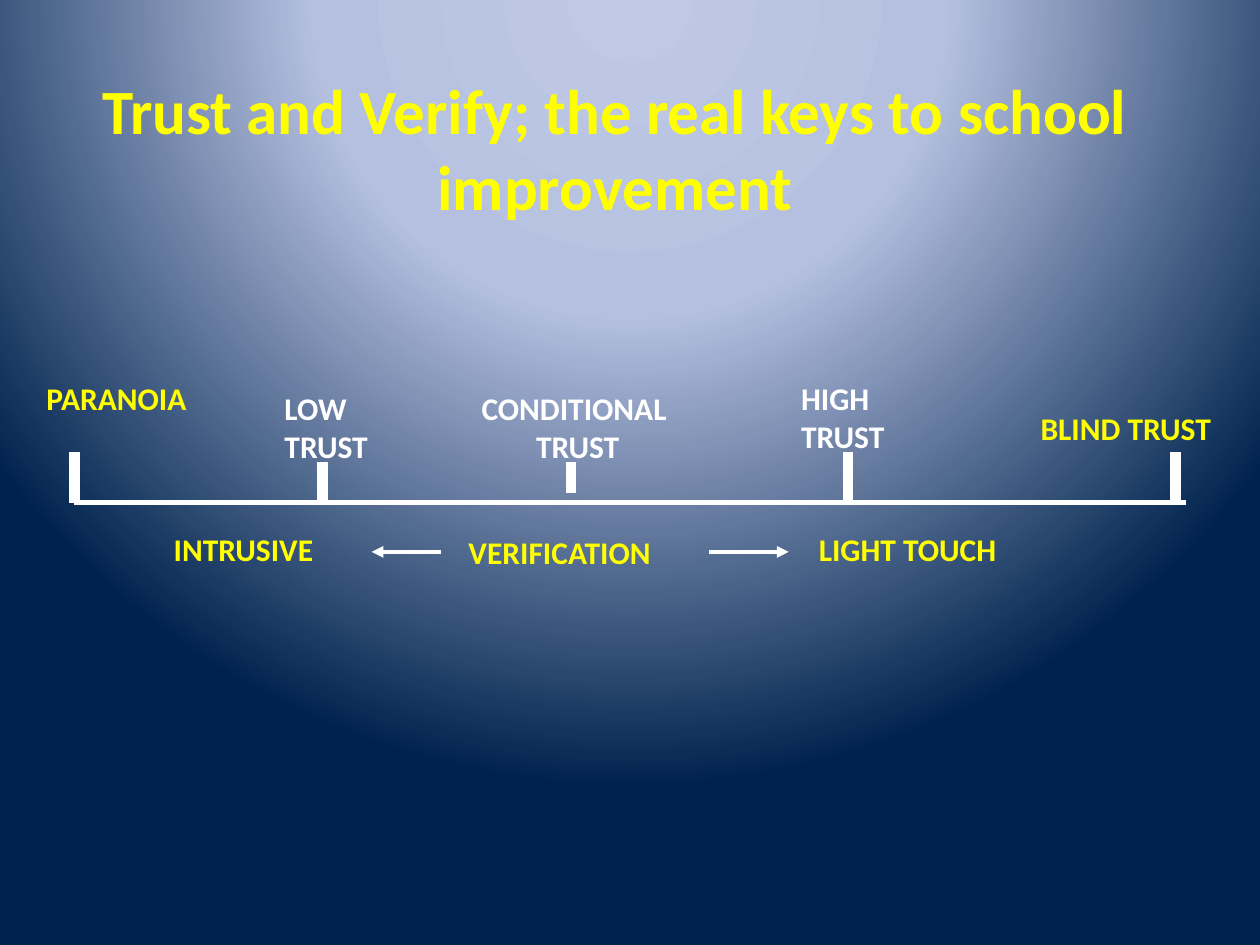
from collections import namedtuple

from lxml.etree import SubElement
from pptx import Presentation
from pptx.dml.color import RGBColor
from pptx.enum.shapes import MSO_CONNECTOR as Connector
from pptx.enum.text import MSO_ANCHOR as Anchor, MSO_AUTO_SIZE as AutoSize, PP_ALIGN as Align
from pptx.oxml import parse_xml
from pptx.oxml.ns import nsdecls, qn
from pptx.util import Inches, Pt

WIDTH, HEIGHT = Inches(10), Inches(7.5)
COLUMN, ROW = WIDTH / 100, HEIGHT / 75
YELLOW, WHITE = "FFFF00", "FFFFFF"
GLOW = {0: "BFC9E5", 40: "B5C0E0", 100: "00234D"}
LEFT, CENTER = Align.LEFT, Align.CENTER

Box = namedtuple("Box", "col row cols rows")
Stop = namedtuple("Stop", "words color align label tick tick_top tick_end")

TRUST_STOPS = [
    Stop(["PARANOIA"], YELLOW, LEFT, Box(0, 0, 13.2, 4), 3.2, 6.3, 10.3),
    Stop(["LOW", "TRUST"], WHITE, LEFT, Box(18.9, 0.8, 10.3, 7), 22.9, 7.1, 10.3),
    Stop(["CONDITIONAL ", "TRUST"], WHITE, CENTER, Box(33.1, 0.8, 20.1, 7), 42.6, 7.1, 9.5),
    Stop(["HIGH", "TRUST"], WHITE, LEFT, Box(59.9, 0, 10.3, 7), 64.6, 6.3, 10.3),
    Stop(["BLIND TRUST"], YELLOW, LEFT, Box(78.9, 2.4, 16.1, 4), 90.6, 6.3, 10.3),
]
VERIFICATION_LABELS = {
    "INTRUSIVE": Box(0, 0, 13.2, 4),
    "VERIFICATION": Box(23.4, 0.2, 16.6, 4),
    "LIGHT TOUCH": Box(51.2, 0, 16.2, 4),
}
VERIFICATION_ARROWS = [(22.2, 16.7), (43.5, 49.8)]


def rgb(color):
    """Turn a hex string into a colour."""
    return RGBColor.from_string(color)


def within(outer, inner):
    """Shift a box by the corner of the region that holds it."""
    return inner._replace(col=outer.col + inner.col, row=outer.row + inner.row)


def measure(box):
    """Give left, top, width and height of a grid box."""
    return [round(n * unit) for n, unit in zip(box, (COLUMN, ROW, COLUMN, ROW))]


def write(frame, words, size, color, align, wrap):
    """Fill a text frame with one bold paragraph for each entry."""
    for key, value in {"word_wrap": wrap, "auto_size": AutoSize.SHAPE_TO_FIT_TEXT,
                       "vertical_anchor": Anchor.TOP}.items():
        setattr(frame, key, value)
    frame.text = "\n".join(words)
    for paragraph in frame.paragraphs:
        paragraph.alignment = align
        for key, value in {"name": "Calibri", "size": Pt(size), "bold": True}.items():
            setattr(paragraph.font, key, value)
        paragraph.font.color.rgb = rgb(color)


def add_label(slide, box, words, color, align=LEFT):
    """Place an unwrapped label on the grid."""
    write(slide.shapes.add_textbox(*measure(box)).text_frame, words, 18, color, align, False)


def add_line(slide, region, start, end, weight, arrow=False):
    """Draw a white line between two grid points of a region."""
    points = [round((corner + n) * unit) for point in (start, end)
              for corner, n, unit in zip(region, point, (COLUMN, ROW))]
    connector = slide.shapes.add_connector(Connector.STRAIGHT, *points)
    connector.line.width = Pt(weight)
    connector.line.color.rgb = rgb(WHITE)
    if arrow:
        SubElement(connector.line._get_or_add_ln(), qn("a:tailEnd"), type="triangle")
    SubElement(connector._element.spPr, qn("a:effectLst"))


def paint_background(slide):
    """Give the slide a round glow centred on its top edge."""
    slide.background.fill.gradient()
    linear = slide.element.find(".//" + qn("a:gradFill"))
    stops = "".join(f'<a:gs pos="{share * 1000}"><a:srgbClr val="{color}"/></a:gs>'
                    for share, color in GLOW.items())
    glow = parse_xml(
        f'<a:gradFill {nsdecls("a")} rotWithShape="1"><a:gsLst>{stops}</a:gsLst>'
        '<a:path path="circle"><a:fillToRect l="50000" t="-80000" r="50000" b="180000"/>'
        '</a:path></a:gradFill>')
    linear.getparent().replace(linear, glow)


def set_title(slide, box, words):
    """Move and format the title placeholder."""
    title = slide.shapes.title
    title.left, title.top, title.width, title.height = measure(box)
    write(title.text_frame, [words], 36, YELLOW, CENTER, True)


def draw_trust_scale(slide, region):
    """Draw the axis of trust with its labels and ticks."""
    add_line(slide, region, (3.2, region.rows), (91.4, region.rows), 3)
    for stop in TRUST_STOPS:
        add_label(slide, within(region, stop.label), stop.words, stop.color, stop.align)
        add_line(slide, region, (stop.tick, stop.tick_top), (stop.tick, stop.tick_end), 6)


def draw_verification(slide, region):
    """Draw the kinds of verification and the arrows between them."""
    for word, box in VERIFICATION_LABELS.items():
        add_label(slide, within(region, box), [word], YELLOW)
    middle = region.rows / 2
    for start, end in VERIFICATION_ARROWS:
        add_line(slide, region, (start, middle), (end, middle), 2.25, arrow=True)


def main():
    """Build and save the slide."""
    deck = Presentation()
    deck.slide_width, deck.slide_height = WIDTH, HEIGHT
    slide = deck.slides.add_slide(deck.slide_layouts.get_by_name("Title Only"))
    paint_background(slide)
    set_title(slide, Box(3.5, 5.2, 90.6, 13.1),
              "Trust and Verify; the real keys to school improvement")
    draw_trust_scale(slide, Box(2.7, 29.6, 95, 10.3))
    draw_verification(slide, Box(12.8, 41.6, 67.4, 4.4))
    deck.save("out.pptx")


if __name__ == "__main__":
    main()
